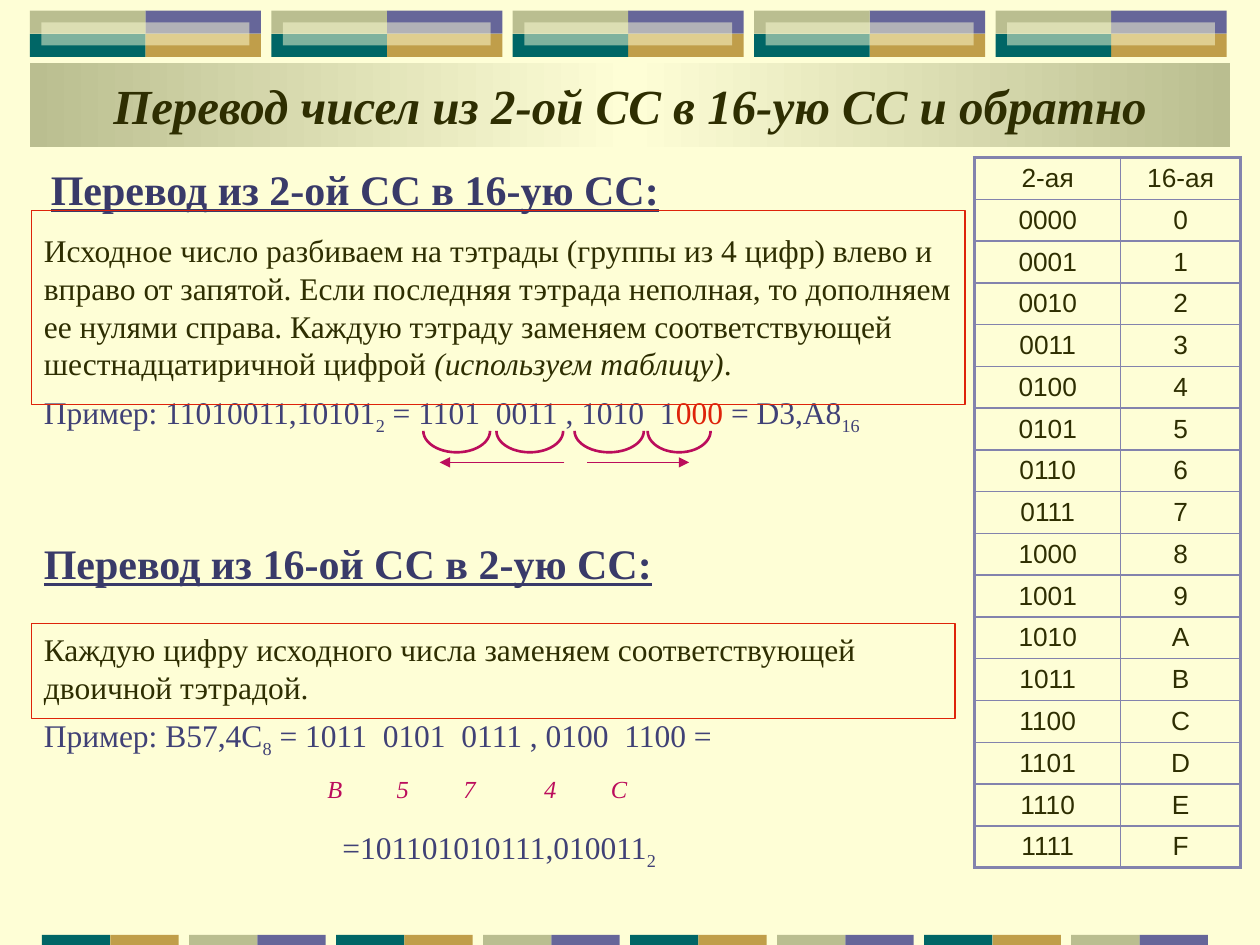
from lxml import etree
from pptx import Presentation
from pptx.dml.color import RGBColor
from pptx.enum.shapes import MSO_CONNECTOR, MSO_SHAPE
from pptx.enum.text import MSO_ANCHOR, PP_ALIGN
from pptx.oxml import parse_xml
from pptx.oxml.ns import nsdecls, qn
from pptx.util import Inches, Pt

RECTANGLE, ARC = MSO_SHAPE.RECTANGLE, MSO_SHAPE.ARC
STRAIGHT = MSO_CONNECTOR.STRAIGHT
CENTER, LEFT = PP_ALIGN.CENTER, PP_ALIGN.LEFT
MIDDLE, TOP = MSO_ANCHOR.MIDDLE, MSO_ANCHOR.TOP

CREAM, OLIVE, VIOLET, GOLD, TEAL = "FEFED6", "BABE90", "666699", "C09E4A", "006666"
INK, NAVY, HEADING, RED, CRIMSON = "2E2E01", "404176", "393A69", "DE230A", "BB0D5C"
BORDER = "8383AD"
SERIF, SANS = "Times New Roman", "Arial"

presentation = Presentation()
presentation.slide_width, presentation.slide_height = Inches(10), Inches(7.5)
CELL = presentation.slide_width / 100  # the slide is a grid of 100 by 75 cells


def place(*cells):
    return [round(cell * CELL) for cell in cells]


def colour(value):
    return RGBColor.from_string(value)


slide = presentation.slides.add_slide(presentation.slide_layouts[5])
shapes = slide.shapes
slide.background.fill.solid()
slide.background.fill.fore_color.rgb = colour(CREAM)

# Decorative tiles along the top and bottom edges
tiles = []
for block in range(5):
    left = 2.37 + block * 19.16
    for column, row, fill in [(1, 0, VIOLET), (1, 1, GOLD), (0, 1, TEAL), (0, 0, OLIVE)]:
        tiles.append((left + column * 9.17, 0.85 + row * 1.83, 9.17, 1.83, fill))
    tiles.append((left + 0.92, 1.77, 16.5, 1.83, CREAM))
for block in range(8):
    pair = (OLIVE, VIOLET) if block % 2 else (TEAL, GOLD)
    for column, fill in enumerate(pair):
        tiles.append((3.33 + block * 11.67 + column * 5.42, 74.2, 5.42, 0.8, fill))

for *bounds, fill in tiles:
    tile = shapes.add_shape(RECTANGLE, *place(*bounds))
    tile.shadow.inherit = False
    tile.fill.solid()
    tile.fill.fore_color.rgb = colour(fill)
    tile.line.fill.background()
    if fill == CREAM:
        rgb = tile.fill._xPr.find(".//" + qn("a:srgbClr"))
        etree.SubElement(rgb, qn("a:alpha"), val="50000")

# Title on a gradient band
title = shapes.title
title.left, title.top, title.width, title.height = place(2.35, 5, 95.3, 6.7)
title.text_frame.text = "Перевод чисел из 2-ой СС в 16-ую СС и обратно"
title.text_frame.vertical_anchor = MIDDLE
title.text_frame.word_wrap = True
paragraph = title.text_frame.paragraphs[0]
paragraph.alignment = CENTER
font = paragraph.runs[0].font
font.name, font.size, font.bold, font.italic = SERIF, Pt(28), True, True
font.color.rgb = colour(INK)
stops = "".join(
    f'<a:gs pos="{position}"><a:srgbClr val="{value}"/></a:gs>'
    for position, value in [(0, OLIVE), (50000, CREAM), (100000, OLIVE)]
)
title.element.spPr.append(parse_xml(
    f'<a:gradFill {nsdecls("a")} rotWithShape="1"><a:gsLst>{stops}</a:gsLst>'
    '<a:lin ang="0" scaled="1"/></a:gradFill>'
))

# Table of binary tetrads and hexadecimal digits
rows = [("2-ая", "16-ая")]
rows += [(f"{value:04b}", digit) for value, digit in enumerate("0123456789АВСDЕF")]
table = shapes.add_table(len(rows), 2, *place(77.35, 12.5, 21.1, 56.4)).table
table.first_row = table.horz_banding = False
table.columns[0].width, table.columns[1].width = place(11.6, 9.5)
for row, texts in enumerate(rows):
    table.rows[row].height = place(56.4 / len(rows))[0]
    for column, text in enumerate(texts):
        cell = table.cell(row, column)
        cell.text_frame.text = text
        cell.vertical_anchor = MIDDLE
        cell.margin_top = cell.margin_bottom = Inches(0.04)
        paragraph = cell.text_frame.paragraphs[0]
        paragraph.alignment = CENTER
        font = paragraph.runs[0].font
        font.name, font.size, font.bold = SANS, Pt(15), False
        font.color.rgb = colour(INK)
        outer_sides = {"L": column == 0, "R": column == 1,
                       "T": row == 0, "B": row == len(rows) - 1}
        for side, outer in outer_sides.items():
            width = Pt(2.25 if outer else 1)
            cell._tc.get_or_add_tcPr().append(parse_xml(
                f'<a:ln{side} {nsdecls("a")} w="{width}"><a:solidFill>'
                f'<a:srgbClr val="{BORDER}"/></a:solidFill></a:ln{side}>'
            ))
        cell.fill.background()

# Explanations: each paragraph has space before, indent in cells and styled runs
styles = {
    "heading": (24, HEADING), "rule": (18, INK), "aside": (18, INK),
    "example": (18, NAVY), "base": (18, NAVY), "padding": (18, RED),
}
blocks = [
    ((2.5, 12.5, 75, 23.2), [
        (0, 0.55, [("Перевод из 2-ой СС в 16-ую СС:", "heading")]),
        (10, 0, [
            ("Исходное число разбиваем на тэтрады (группы из 4 цифр) влево и вправо "
             "от запятой. Если последняя тэтрада неполная, то дополняем ее нулями "
             "справа. Каждую тэтраду заменяем соответствующей шестнадцатиричной "
             "цифрой ", "rule"),
            ("(используем таблицу)", "aside"), (".", "rule")]),
        (9.5, 0, [
            ("Пример: 11010011,10101", "example"), ("2", "base"),
            (" = 1101  0011 , 1010  1", "example"), ("000", "padding"),
            (" = D3,А8", "example"), ("16", "base")]),
    ]),
    ((2.5, 42.2, 75.6, 28.3), [
        (0, 0, [("Перевод из 16-ой СС в 2-ую СС:", "heading")]),
        (24, 0, [("Каждую цифру исходного числа заменяем соответствующей "
                  "двоичной тэтрадой.", "rule")]),
        (9, 0, [("Пример: В57,4С", "example"), ("8", "base"),
                (" = 1011  0101  0111 , 0100  1100 =", "example")]),
        (42.5, 23.7, [("=101101010111,010011", "example"), ("2", "base")]),
    ]),
]
for bounds, paragraphs in blocks:
    frame = shapes.add_textbox(*place(*bounds)).text_frame
    frame.word_wrap = True
    frame.vertical_anchor = TOP
    for number, (space, indent, runs) in enumerate(paragraphs):
        paragraph = frame.add_paragraph() if number else frame.paragraphs[0]
        paragraph.alignment = LEFT
        if number:
            paragraph.space_before = Pt(space)
            paragraph.line_spacing = Pt(21.5)
        if indent:
            paragraph._p.get_or_add_pPr().set("marL", str(place(indent)[0]))
        for text, style in runs:
            run = paragraph.add_run()
            run.text = text
            size, value = styles[style]
            run.font.name, run.font.size = SERIF, Pt(size)
            run.font.color.rgb = colour(value)
            run.font.bold = run.font.underline = style == "heading"
            run.font.italic = style == "aside"
            if style == "base":
                run.font._element.set("baseline", "-25000")

# Arcs under the tetrads
for left, width in [(33.6, 5.3), (39.4, 5.3), (45.6, 5.5), (51.4, 5)]:
    arc = shapes.add_shape(ARC, *place(left, 32.5, width, 3.4))
    arc.shadow.inherit = False
    arc.adjustments[0], arc.adjustments[1] = 0, 108  # lower half of the ellipse
    arc.fill.background()
    arc.line.color.rgb = colour(CRIMSON)
    arc.line.width = Pt(1.5)

# Arrows pointing away from the comma
for start, end in [(44.8, 34.9), (46.6, 54.7)]:
    arrow = shapes.add_connector(STRAIGHT, *place(start, 36.7, end, 36.7))
    arrow.line.color.rgb = colour(CRIMSON)
    arrow.line.width = Pt(1)
    etree.SubElement(arrow.line._get_or_add_ln(), qn("a:tailEnd"), type="triangle")
    etree.SubElement(arrow._element.spPr, qn("a:effectLst"))

# Frames around the rules
for bounds in [(2.5, 16.7, 74.1, 15.4), (2.5, 49.5, 73.3, 7.5)]:
    border = shapes.add_shape(RECTANGLE, *place(*bounds))
    border.shadow.inherit = False
    border.fill.background()
    border.line.color.rgb = colour(RED)
    border.line.width = Pt(0.75)

# Hexadecimal digits under their tetrads
frame = shapes.add_textbox(*place(25, 60.9, 26.7, 3.3)).text_frame
frame.word_wrap = True
frame.text = "В\t5\t7\t4\tС"
paragraph = frame.paragraphs[0]
tabs = etree.SubElement(paragraph._p.get_or_add_pPr(), qn("a:tabLst"))
for position in place(5.5, 10.8, 17.2, 22.5):
    etree.SubElement(tabs, qn("a:tab"), pos=str(position), algn="l")
for run in paragraph.runs:
    run.font.name, run.font.size, run.font.italic = SERIF, Pt(14), True
    run.font.color.rgb = colour(CRIMSON)

presentation.save("out.pptx")
